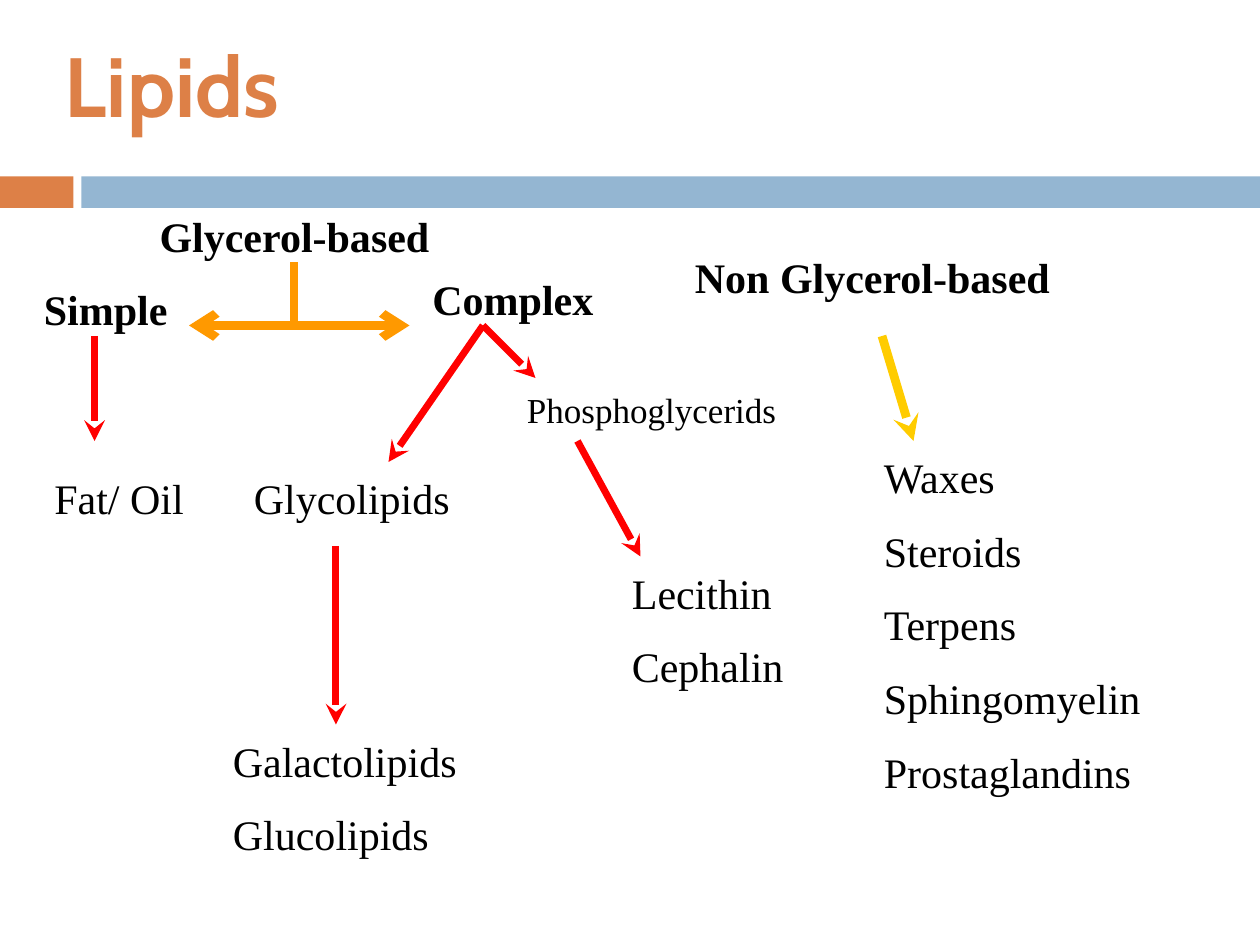
"""Build a slide that sorts lipids into glycerol-based and other kinds."""
import dataclasses

import lxml.etree
import pptx
import pptx.dml.color
import pptx.enum.shapes
import pptx.enum.text
import pptx.oxml.ns
import pptx.util

Pt = pptx.util.Pt
Anchor = pptx.enum.text.MSO_ANCHOR


@dataclasses.dataclass(frozen=True)
class Theme:
    rust: str = "DD8047"
    sky: str = "94B6D2"
    ink: str = "000000"
    red: str = "FF0000"
    orange: str = "FF9900"
    gold: str = "FFCC00"
    head: str = "Cabin"
    body: str = "Times New Roman"
    huge: int = 48
    large: int = 24
    small: int = 20
    thin: int = 4
    thick: int = 5
    gap: float = 13.3


def apply(item, form):
    for name, value in form.items():
        setattr(item, name, value)


def color(code):
    return pptx.dml.color.RGBColor.from_string(code)


class Painter:
    def __init__(self, slide, theme):
        self.slide = slide
        self.theme = theme

    def bar(self, left, top, width, height, fill):
        kind = pptx.enum.shapes.MSO_SHAPE.RECTANGLE
        shape = self.slide.shapes.add_shape(kind, *map(Pt, (left, top, width, height)))
        shape.shadow.inherit = False
        shape.fill.solid()
        shape.fill.fore_color.rgb = color(fill)
        shape.line.fill.background()

    def text(self, left, top, width, height, lines, inset=None, **form):
        box = self.slide.shapes.add_textbox(*map(Pt, (left, top, width, height)))
        frame = box.text_frame
        apply(frame, {"word_wrap": True, "margin_top": Pt(6),
                      "vertical_anchor": Anchor.TOP, **(inset or {})})
        font = {"name": self.theme.body, "size": Pt(self.theme.large),
                "bold": False, **form}
        ink = font.pop("ink", self.theme.ink)
        for index, line in enumerate(lines):
            para = frame.add_paragraph() if index else frame.paragraphs[0]
            para.space_before = Pt(self.theme.gap if index else 0)
            run = para.add_run()
            run.text = line
            apply(run.font, font)
            run.font.color.rgb = color(ink)

    def line(self, start, end, ink, width, **tips):
        kind = pptx.enum.shapes.MSO_CONNECTOR.STRAIGHT
        link = self.slide.shapes.add_connector(kind, *map(Pt, start + end))
        apply(link.line, {"width": Pt(width)})
        link.line.color.rgb = color(ink)
        edge = link.line._get_or_add_ln()
        for tag, tip in tips.items():
            lxml.etree.SubElement(edge, pptx.oxml.ns.qn("a:" + tag), type=tip)
        lxml.etree.SubElement(link._element.spPr, pptx.oxml.ns.qn("a:effectLst"))


def main():
    deck = pptx.Presentation()
    apply(deck, {"slide_width": Pt(720), "slide_height": Pt(540)})
    theme = Theme()
    paint = Painter(deck.slides.add_slide(deck.slide_layouts[6]), theme)

    paint.bar(0, 100.8, 42, 18, theme.rust)
    paint.bar(46.5, 100.8, 673.5, 18, theme.sky)
    paint.text(30, 12, 264, 72, ["Lipids"],
               {"margin_top": Pt(3.6), "vertical_anchor": Anchor.MIDDLE},
               name=theme.head, size=Pt(theme.huge), bold=True, ink=theme.rust)

    paint.text(54, 114, 276, 36, ["Glycerol-based"], {"margin_left": Pt(37.2)}, bold=True)
    for left, top, width, label in (
        (18, 156, 102, "Simple"),
        (240, 150, 108, "Complex"),
        (390, 138, 252, "Non Glycerol-based"),
    ):
        paint.text(left, top, width, 36, [label], bold=True)

    paint.text(294, 216, 162, 31, ["Phosphoglycerids"], size=Pt(theme.small))
    for left, top, width, height, lines in (
        (24, 264, 96, 36, ["Fat/ Oil"]),
        (138, 264, 138, 36, ["Glycolipids"]),
        (126, 414, 162, 79, ["Galactolipids", "Glucolipids"]),
        (354, 318, 126, 79, ["Lecithin", "Cephalin"]),
        (498, 252, 162, 251,
         ["Waxes", "Steroids", "Terpens", "Sphingomyelin", "Prostaglandins"]),
    ):
        paint.text(left, top, width, height, lines)

    paint.line((168, 150), (168, 186), theme.orange, theme.thick)
    paint.line((108, 186), (234, 186), theme.orange, theme.thick,
               headEnd="arrow", tailEnd="arrow")
    for start, end in (
        ((276, 186), (222, 264)),
        ((54, 192), (54, 252)),
        ((276, 186), (306, 216)),
        ((192, 312), (192, 414)),
        ((330, 252), (366, 318)),
    ):
        paint.line(start, end, theme.red, theme.thin, tailEnd="stealth")
    paint.line((504, 192), (522, 252), theme.gold, theme.thick, tailEnd="stealth")

    deck.save("out.pptx")


if __name__ == "__main__":
    main()
